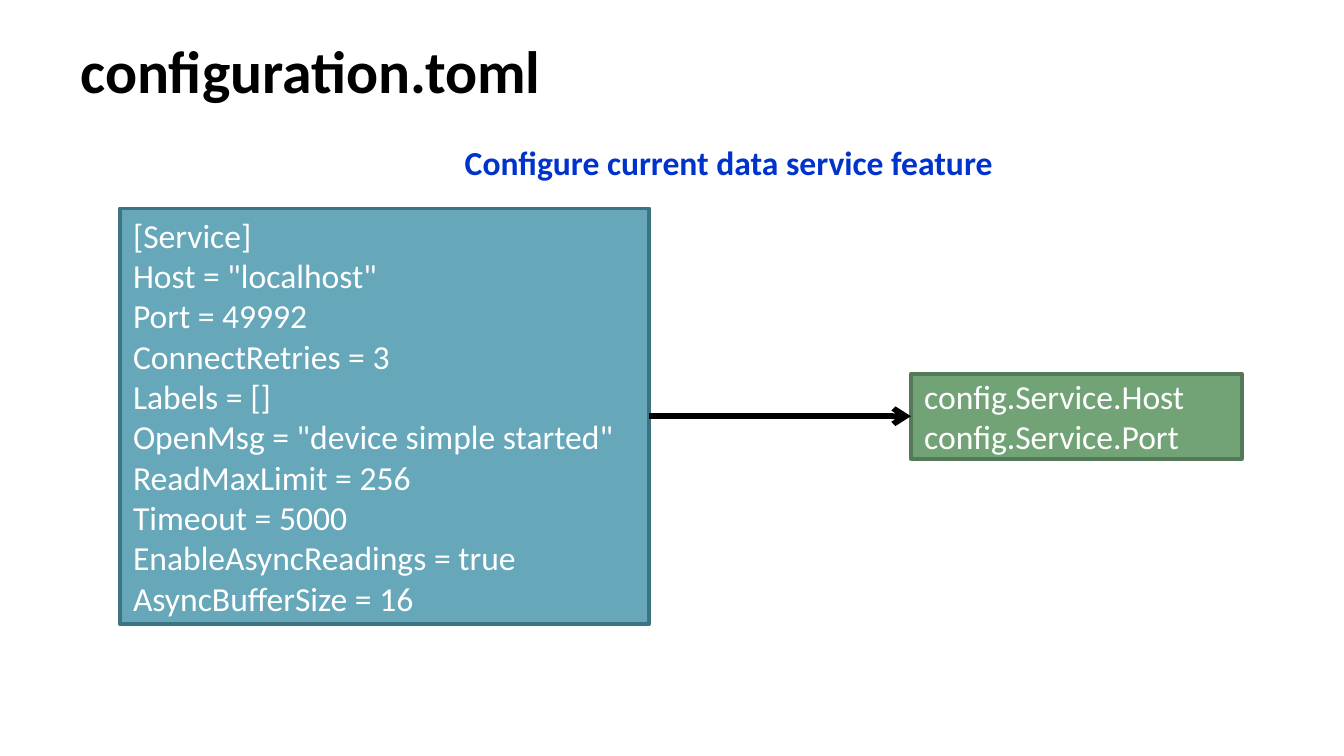
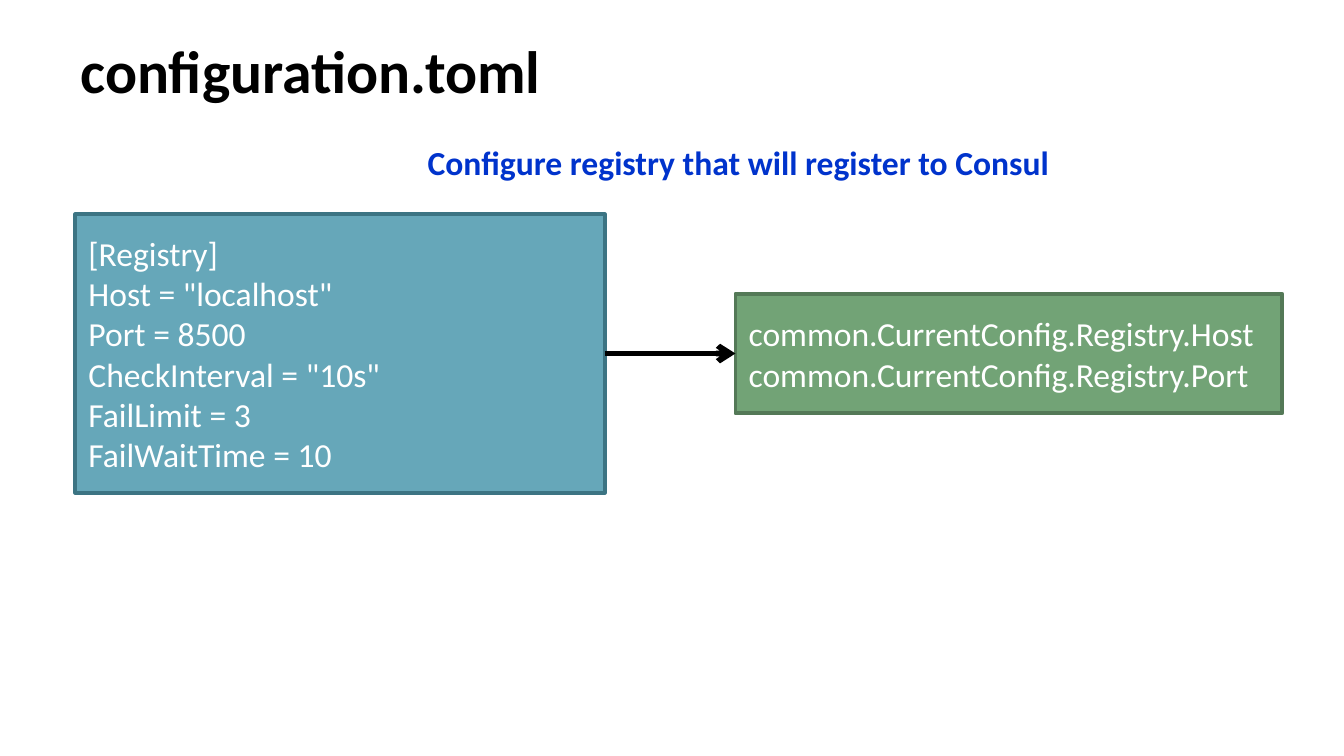
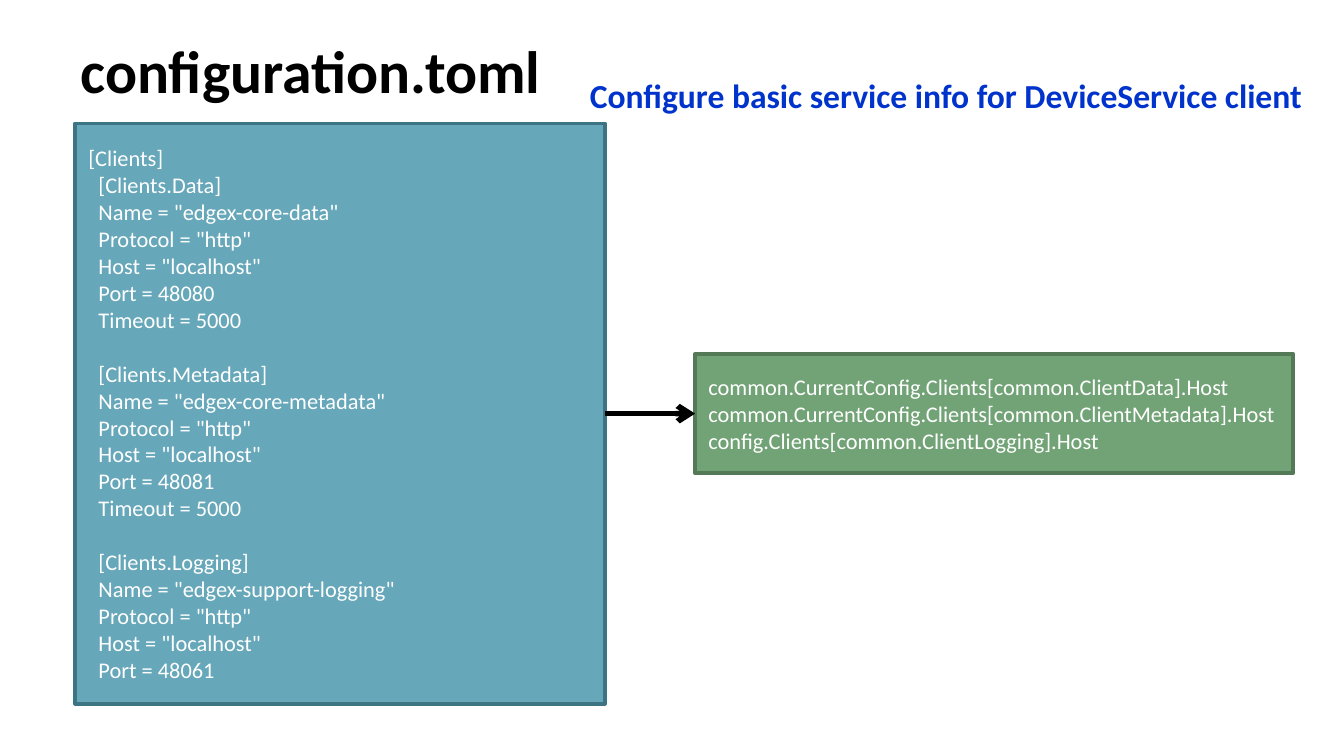
from dataclasses import dataclass

from lxml.etree import SubElement
from pptx import Presentation
from pptx.dml.color import RGBColor as Rgb
from pptx.enum.shapes import MSO_CONNECTOR as Link, MSO_SHAPE as Shape
from pptx.enum.text import MSO_ANCHOR as Anchor, MSO_AUTO_SIZE as Fit, PP_ALIGN as Align
from pptx.oxml.ns import qn
from pptx.util import Pt


@dataclass(frozen=True)
class Theme:
    font: str = "Calibri"
    black: Rgb = Rgb(0x00, 0x00, 0x00)
    white: Rgb = Rgb(0xFF, 0xFF, 0xFF)
    blue: Rgb = Rgb(0x00, 0x33, 0xCC)
    teal: tuple = (Rgb(0x66, 0xA7, 0xB9), Rgb(0x3C, 0x74, 0x83))
    green: tuple = (Rgb(0x72, 0xA3, 0x76), Rgb(0x54, 0x79, 0x57))
    title: int = 32
    body: int = 18
    small: int = 12
    edge: int = 2
    arrow: int = 3
    leading: float = 1.22


THEME = Theme()
CODE_WIDTH = 283.7
TITLE_BOX = (36, 7.2, 648, 59.8)

SERVICE = """[Service]
Host = "localhost"
Port = 49992
ConnectRetries = 3
Labels = []
OpenMsg = "device simple started"
ReadMaxLimit = 256
Timeout = 5000
EnableAsyncReadings = true
AsyncBufferSize = 16"""

REGISTRY = """[Registry]
Host = "localhost"
Port = 8500
CheckInterval = "10s"
FailLimit = 3
FailWaitTime = 10"""

CLIENTS = """[Clients]
  [Clients.Data]
  Name = "edgex-core-data"
  Protocol = "http"
  Host = "localhost"
  Port = 48080
  Timeout = 5000

  [Clients.Metadata]
  Name = "edgex-core-metadata"
  Protocol = "http"
  Host = "localhost"
  Port = 48081
  Timeout = 5000

  [Clients.Logging]
  Name = "edgex-support-logging"
  Protocol = "http"
  Host = "localhost"
  Port = 48061"""

SERVICE_USE = """config.Service.Host
config.Service.Port"""

REGISTRY_USE = """common.CurrentConfig.Registry.Host
common.CurrentConfig.Registry.Port"""

CLIENTS_USE = """common.CurrentConfig.Clients[common.ClientData].Host
common.CurrentConfig.Clients[common.ClientMetadata].Host
config.Clients[common.ClientLogging].Host"""


def write(frame, text, size, color, bold=False):
    """Write one paragraph a line; an empty line becomes space before the next."""
    gap = False
    first = True
    for line in text.split("\n"):
        if not line:
            gap = True
            continue
        para = frame.paragraphs[0] if first else frame.add_paragraph()
        para.text = line
        para.alignment = Align.LEFT
        if gap:
            para.space_before = Pt(round(size * THEME.leading, 1))
        font = para.font
        font.name, font.size, font.bold = THEME.font, Pt(size), bold
        font.color.rgb = color
        first = gap = False


def add_title(slide, text, box):
    frame = slide.shapes.add_textbox(*map(Pt, box)).text_frame
    frame.word_wrap = True
    frame.vertical_anchor = Anchor.MIDDLE
    write(frame, text, THEME.title, THEME.black, bold=True)


def add_caption(slide, text, box):
    frame = slide.shapes.add_textbox(*map(Pt, box)).text_frame
    frame.word_wrap = False
    frame.auto_size = Fit.SHAPE_TO_FIT_TEXT
    write(frame, text, THEME.body, THEME.blue, bold=True)


def add_panel(slide, text, box, mid, size, colors):
    """Place a box of (left, width, height) centred on the height mid."""
    left, width, height = box
    panel = slide.shapes.add_shape(
        Shape.RECTANGLE, Pt(left), Pt(mid - height / 2), Pt(width), Pt(height))
    panel.shadow.inherit = False
    fill, edge = colors
    panel.fill.solid()
    panel.fill.fore_color.rgb = fill
    panel.line.color.rgb = edge
    panel.line.width = Pt(THEME.edge)
    frame = panel.text_frame
    frame.word_wrap = True
    frame.vertical_anchor = Anchor.MIDDLE
    write(frame, text, size, THEME.white)
    return panel


def add_arrow(slide, start, end):
    arrow = slide.shapes.add_connector(Link.STRAIGHT, 0, 0, 0, 0)
    arrow.begin_connect(start, 3)
    arrow.end_connect(end, 1)
    arrow.line.color.rgb = THEME.black
    arrow.line.width = Pt(THEME.arrow)
    SubElement(arrow.line._get_or_add_ln(), qn("a:tailEnd"), type="arrow")
    SubElement(arrow._element.spPr, qn("a:effectLst"))


def add_page(deck, caption, place, code, code_box, usage, usage_box, mid, size):
    """Add a slide that links a block of settings to the code that reads it."""
    slide = deck.slides.add_slide(deck.slide_layouts[6])
    add_title(slide, "configuration.toml", TITLE_BOX)
    target = add_panel(slide, usage, usage_box, mid, size, THEME.green)
    source = add_panel(slide, code, code_box, mid, size, THEME.teal)
    add_arrow(slide, source, target)
    add_caption(slide, caption, place)


def main():
    deck = Presentation()
    deck.slide_width, deck.slide_height = Pt(720), Pt(405)
    add_page(deck, "Configure current data service feature", (241.9, 72.7, 299.5, 29),
             SERVICE, (64.2, CODE_WIDTH, 222.6),
             SERVICE_USE, (488, 177.2, 45.6), 223, THEME.body)
    add_page(deck, "Configure registry that will register to Consul", (222, 72.7, 350, 29),
             REGISTRY, (40.3, CODE_WIDTH, 149.2),
             REGISTRY_USE, (394, 293, 64), 189.4, THEME.body)
    add_page(deck, "Configure basic service info for DeviceService client",
             (308.9, 36.7, 398.9, 29),
             CLIENTS, (40.3, CODE_WIDTH, 311),
             CLIENTS_USE, (372.4, 320.4, 64), 221.6, THEME.small)
    deck.save("out.pptx")


if __name__ == "__main__":
    main()
